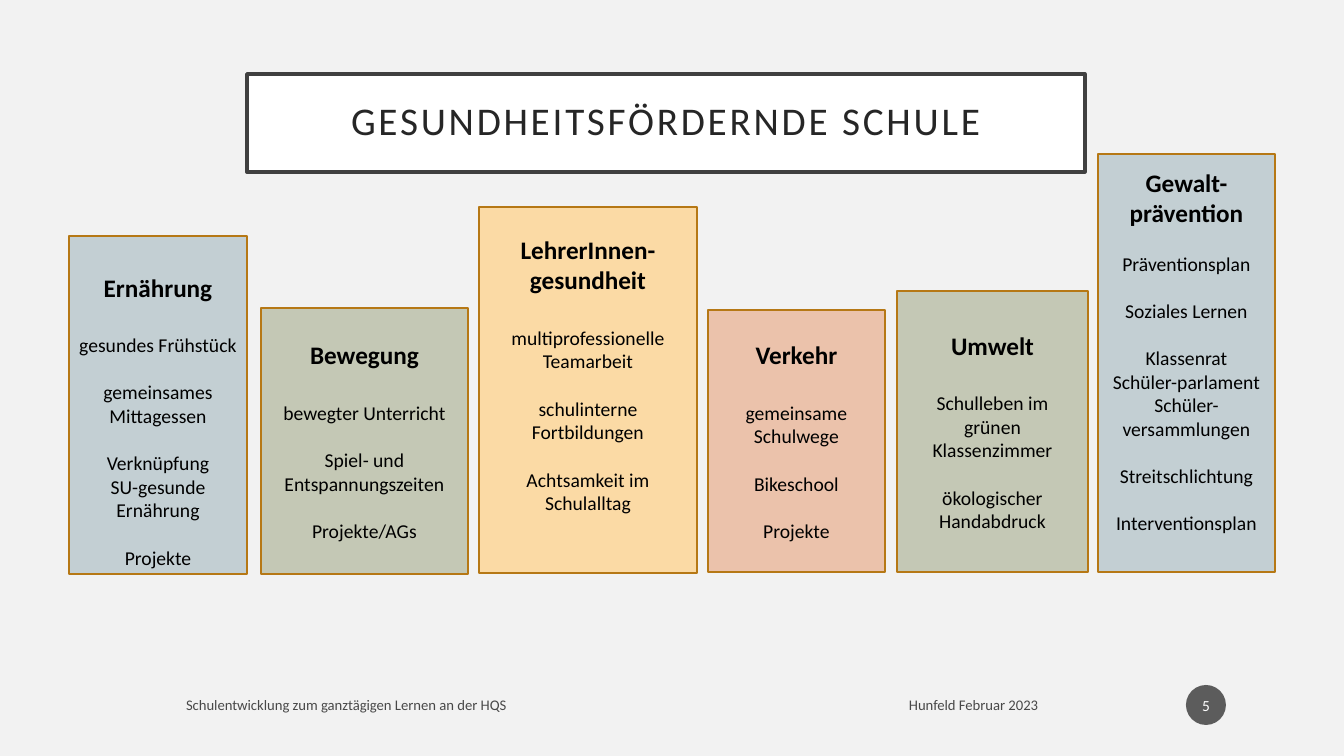
import pptx
import pptx.dml.color
import pptx.enum.shapes
import pptx.enum.text
import pptx.oxml
import pptx.oxml.ns
import pptx.util

PX = 914400 / 100.8
COLOURS = {
    "page": "F2F2F2", "white": "FFFFFF", "black": "000000",
    "frame": "404040", "title": "262626", "badge": "1D1D1D", "border": "B67815",
    "blue": "C3CFD3", "green": "C4C8B5", "yellow": "FBDAA5", "red": "EBC2AB",
}
MARGINS = (10, 5, 10, 5)
LINE_14 = 17  # height in points of a line of 14 pt text
LINE_18 = 22  # height in points of a line of 18 pt text

# heading, colour, place, margins, gap below heading, groups of lines
PILLARS = [
    ("Ernährung", "blue", (69, 236, 178, 338), (6, 36, 6, 5), LINE_18,
     [["gesundes Frühstück"], ["gemeinsames Mittagessen"],
      ["Verknüpfung", "SU-gesunde Ernährung"], ["Projekte"]]),
    ("Bewegung", "green", (261, 308, 207, 266), MARGINS, LINE_18,
     [["bewegter Unterricht"], ["Spiel- und Entspannungszeiten"], ["Projekte/AGs"]]),
    ("LehrerInnen-gesundheit", "yellow", (479, 207, 218, 366), (10, 5, 10, 36), LINE_18,
     [["multiprofessionelle Teamarbeit"], ["schulinterne Fortbildungen"],
      ["Achtsamkeit im Schulalltag"]]),
    ("Verkehr", "red", (708, 310, 177, 262), MARGINS, LINE_18,
     [["gemeinsame Schulwege"], ["Bikeschool"], ["Projekte"]]),
    ("Umwelt", "green", (897, 291, 191, 281), MARGINS, LINE_18,
     [["Schulleben im grünen Klassenzimmer"], ["ökologischer Handabdruck"]]),
    ("Gewalt-prävention", "blue", (1098, 154, 177, 418), (10, 5, 10, 29), LINE_14,
     [["Präventionsplan"], ["Soziales Lernen"],
      ["Klassenrat", "Schüler-parlament", "Schüler-versammlungen"],
      ["Streitschlichtung"], ["Interventionsplan"]]),
]


def px(length):
    return pptx.util.Emu(round(length * PX))


def colour(name):
    return pptx.dml.color.RGBColor.from_string(COLOURS[name])


def set_opacity(element, percent):
    for tint in element.iter(pptx.oxml.ns.qn("a:srgbClr")):
        alpha = pptx.oxml.parse_xml(
            f'<a:alpha {pptx.oxml.ns.nsdecls("a")} val="{percent * 1000}"/>')
        tint.append(alpha)


class Slide:
    font = "Calibri"
    shapes = pptx.enum.shapes.MSO_SHAPE
    align = pptx.enum.text.PP_ALIGN

    def __init__(self, deck):
        self.page = deck.slides.add_slide(deck.slide_layouts[6])
        self.page.background.fill.solid()
        self.page.background.fill.fore_color.rgb = colour("page")

    def frame(self, box, margins):
        """Set wrapping, middle anchor and margins (left, top, right, bottom)."""
        frame = box.text_frame
        frame.word_wrap = True
        frame.vertical_anchor = pptx.enum.text.MSO_ANCHOR.MIDDLE
        frame.margin_left, frame.margin_top, frame.margin_right, frame.margin_bottom = (
            px(margin) for margin in margins)

    def shape(self, kind, place, fill, line=None, width=1, margins=MARGINS):
        box = self.page.shapes.add_shape(kind, *map(px, place))
        box.shadow.inherit = False
        box.fill.solid()
        box.fill.fore_color.rgb = colour(fill)
        if line:
            box.line.color.rgb = colour(line)
            box.line.width = pptx.util.Pt(width)
        else:
            box.line.fill.background()
        self.frame(box, margins)
        return box

    def paragraph(self, box, text, size, tint="black", bold=False, before=0,
                  align=align.CENTER):
        """Fill the first paragraph if it is still empty, else add one."""
        frame = box.text_frame
        para = frame.add_paragraph() if frame.text else frame.paragraphs[0]
        para.alignment = align
        para.space_before = pptx.util.Pt(before)
        span = para.add_run()
        span.text = text
        span.font.name = self.font
        span.font.size = pptx.util.Pt(size)
        span.font.bold = bold
        span.font.color.rgb = colour(tint)
        return para, span

    def title(self, text, place):
        box = self.shape(self.shapes.RECTANGLE, place, "white", "frame", 2.5, (20,) * 4)
        para, span = self.paragraph(box, text, 28, "title")
        para.line_spacing = 0.9
        span.font._element.set("spc", "200")

    def pillar(self, heading, fill, place, margins, heading_gap, groups):
        box = self.shape(self.shapes.RECTANGLE, place, fill, "border", margins=margins)
        self.paragraph(box, heading, 18, bold=True)
        gap = heading_gap
        for group in groups:
            for line in group:
                self.paragraph(box, line, 14, before=gap)
                gap = 0
            gap = LINE_14

    def footer(self, text, place):
        box = self.page.shapes.add_textbox(*map(px, place))
        self.frame(box, MARGINS)
        self.paragraph(box, text, 10.5, align=self.align.LEFT)
        set_opacity(box._element, 70)

    def badge(self, text, place):
        box = self.shape(self.shapes.OVAL, place, "badge", margins=(2, 5, 2, 5))
        set_opacity(box._element.spPr, 70)
        self.paragraph(box, text, 11, "white")


def main():
    deck = pptx.Presentation()
    deck.slide_width, deck.slide_height = px(1344), px(756)
    slide = Slide(deck)
    slide.title("GESUNDHEITSFÖRDERNDE SCHULE", (247, 74, 838, 98))
    for pillar in PILLARS:
        slide.pillar(*pillar)
    slide.footer("Schulentwicklung zum ganztägigen Lernen an der HQS", (176, 687, 400, 36))
    slide.footer("Hunfeld Februar 2023", (899, 687, 200, 36))
    slide.badge("5", (1186, 685, 40, 40))
    deck.save("out.pptx")


if __name__ == "__main__":
    main()
